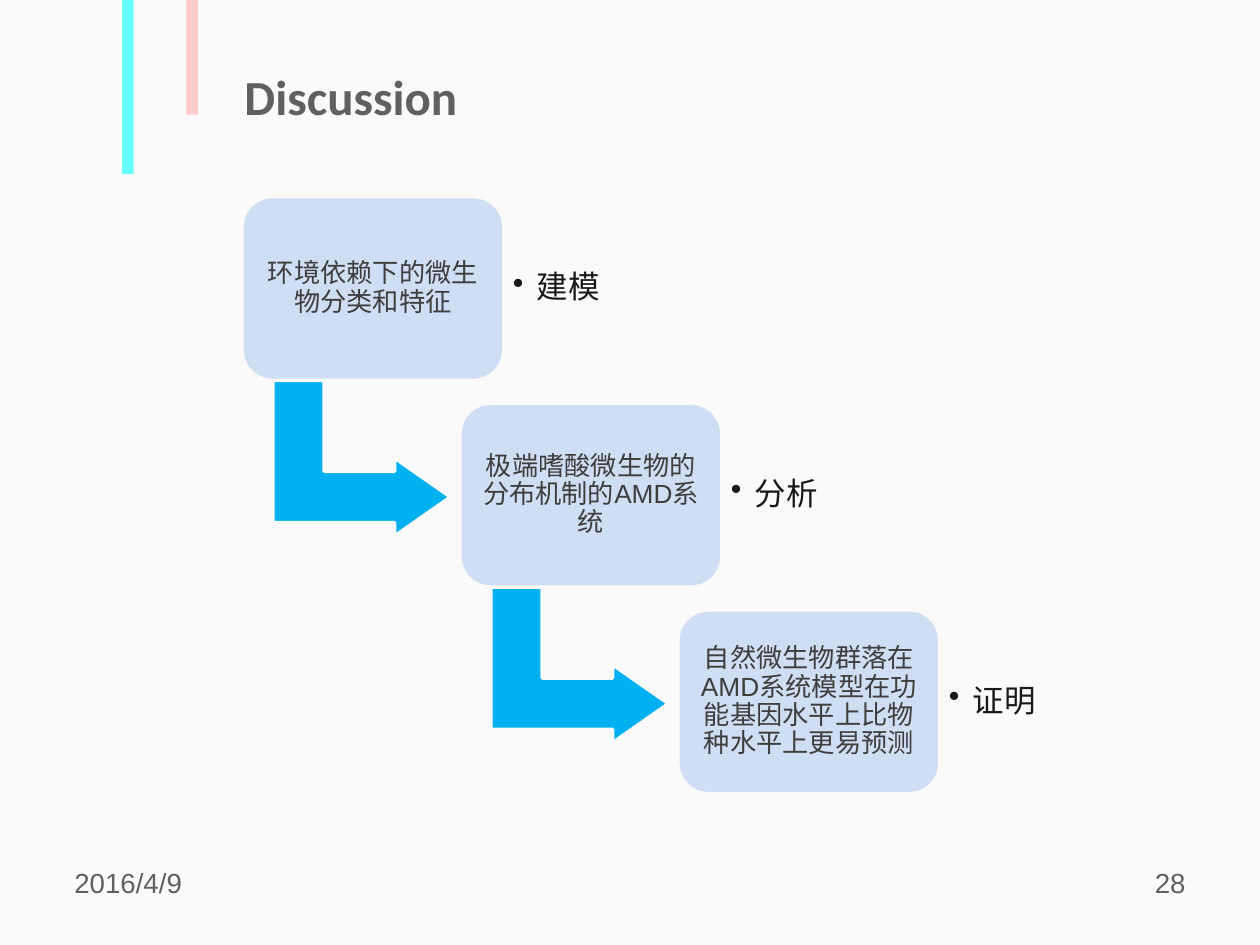
from lxml import etree
from pptx import Presentation
from pptx import util as u
from pptx.dml.color import RGBColor
from pptx.enum import shapes, text
from pptx.oxml.ns import qn

W, H = 10, 7.5
BACK, GREY = "FAFAFA", "606060"
BOX_W, BOX_H = 2.08, 1.46
LEFT, TOP = 1.92, 1.56
STEP_X, STEP_Y = 1.73, 1.64  # offset from one stair to the next
STAIRS = [
    (["环境依赖下的微生物分类和特征"], "建模"),
    (["极端嗜酸微生物的分布机制的", "AMD", "系统"], "分析"),
    (["自然微生物群落在", "AMD", "系统模型在功能基因水平上比物种水平上更易预测"], "证明"),
]


def color(value):
    return RGBColor.from_string(value)


def inches(*lengths):
    return [u.Inches(n) for n in lengths]


def add_block(s, kind, at, fill, line=None):
    sp = s.shapes.add_shape(kind, *inches(*at))
    sp.shadow.inherit = False
    sp.fill.solid()
    sp.fill.fore_color.rgb = color(fill)
    if line:
        sp.line.color.rgb = color(line)
        sp.line.width = u.Pt(2)
    else:
        sp.line.fill.background()
    return sp


def write(sp, runs, size, ink, align=text.PP_ALIGN.LEFT, anchor=text.MSO_ANCHOR.TOP,
          margin=(0.09, 0.04), font="Arial", bold=False):
    tf = sp.text_frame
    tf.word_wrap = True
    tf.vertical_anchor = anchor
    tf.margin_left = tf.margin_right = u.Inches(margin[0])
    tf.margin_top = tf.margin_bottom = u.Inches(margin[1])
    p = tf.paragraphs[0]
    p.alignment = align
    for part in runs:
        r = p.add_run()
        r.text = part
        r.font.size = u.Pt(size)
        r.font.name = font
        r.font.bold = bold
        r.font.color.rgb = color(ink)
    return p


def add_bullet(p, indent):
    pPr = p._p.get_or_add_pPr()
    pPr.set("marL", str(u.Inches(indent)))
    pPr.set("indent", str(-u.Inches(indent)))
    etree.SubElement(pPr, qn("a:buChar")).set("char", "•")


def add_title(s, words):
    sp = s.shapes.title
    sp.left, sp.top, sp.width, sp.height = inches(1.84, 0.48, 3.23, 0.57)
    write(sp, [words], 28, GREY, margin=(0.1, 0.05), font="Calibri", bold=True)


def add_footer(s, left, words, align):
    sp = s.shapes.add_textbox(*inches(left, 6.83, 2.33, 0.52))
    write(sp, [words], 15.8, GREY, align)


def add_arrow(s, x, y):
    sp = add_block(s, shapes.MSO_SHAPE.BENT_UP_ARROW,
                   (x + 0.33, y + 1.37, 1.24, 1.41), "00B0F0", BACK)
    sp.rotation = 90
    for i, value in enumerate((0.328, 0.25, 0.358)):
        sp.adjustments[i] = value


def add_stair(s, x, y, runs, label):
    # Box with its statement
    sp = add_block(s, shapes.MSO_SHAPE.ROUNDED_RECTANGLE,
                   (x, y, BOX_W, BOX_H), "CFDEF3", BACK)
    p = write(sp, runs, 15, "3E3E3E", text.PP_ALIGN.CENTER,
              text.MSO_ANCHOR.MIDDLE, (0.06, 0.06))
    p.line_spacing = 0.9

    # Bulleted label to the right
    sp = s.shapes.add_textbox(*inches(x + BOX_W, y + 0.14, 1.52, 1.18))
    p = write(sp, [label], 18, "191919", anchor=text.MSO_ANCHOR.MIDDLE,
              margin=(0.07, 0.07))
    p.line_spacing = 0.9
    add_bullet(p, 0.19)


def main():
    prs = Presentation()
    prs.slide_width, prs.slide_height = inches(W, H)
    s = prs.slides.add_slide(prs.slide_layouts[5])
    s.background.fill.solid()
    s.background.fill.fore_color.rgb = color(BACK)

    # Hanging bars
    for left, height, fill in ((0.97, 1.38, "66FFFF"), (1.48, 0.91, "FFCCCC")):
        add_block(s, shapes.MSO_SHAPE.RECTANGLE, (left, 0, 0.09, height), fill)

    # Title, date and page number
    add_title(s, "Discussion")
    add_footer(s, 0.5, "2016/4/9", text.PP_ALIGN.LEFT)
    add_footer(s, 7.17, "28", text.PP_ALIGN.RIGHT)

    # Staircase, with an arrow down from each step but the last
    for i, (runs, label) in enumerate(STAIRS):
        x, y = LEFT + i * STEP_X, TOP + i * STEP_Y
        if i < len(STAIRS) - 1:
            add_arrow(s, x, y)
        add_stair(s, x, y, runs, label)

    prs.save("out.pptx")


if __name__ == "__main__":
    main()
